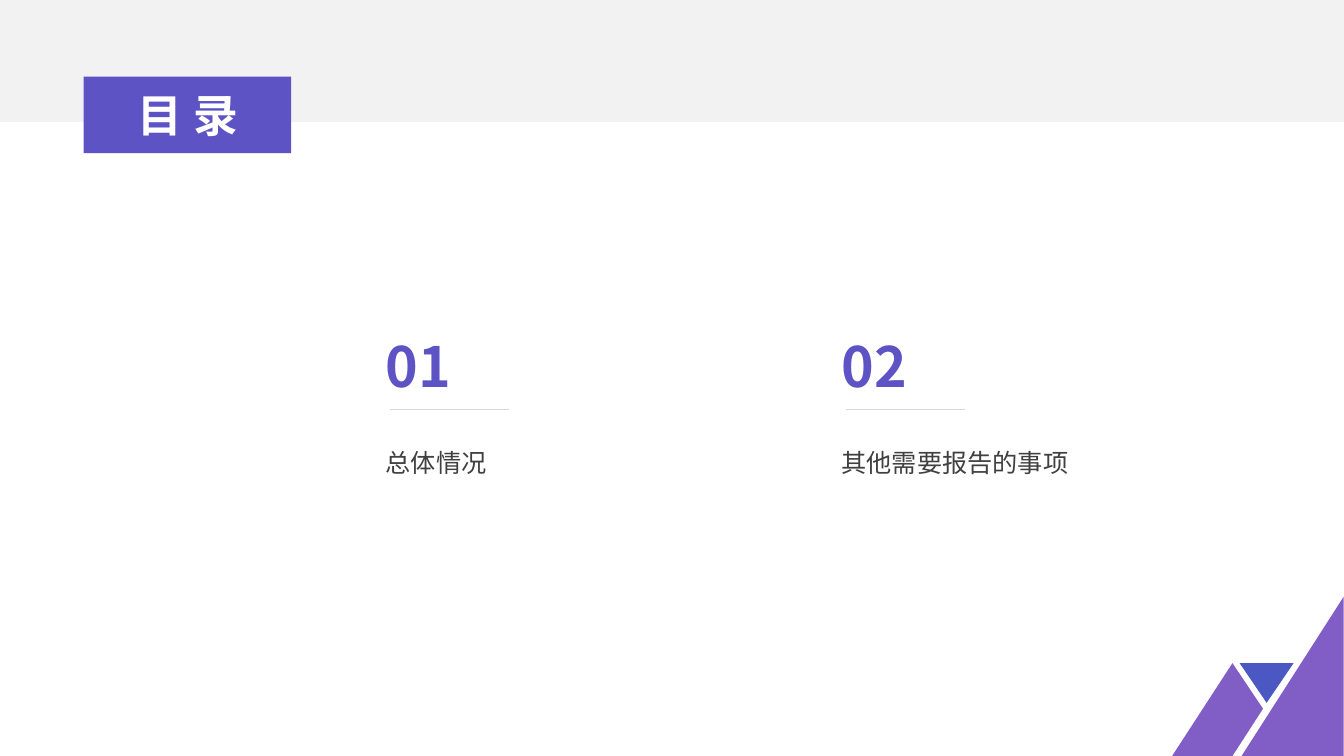
import dataclasses

import lxml.etree
import pptx
import pptx.dml.color
import pptx.enum.shapes
import pptx.enum.text
import pptx.oxml.ns
import pptx.util

Cm = pptx.util.Cm
Pt = pptx.util.Pt
ALIGN = pptx.enum.text.PP_ALIGN
SHAPE = pptx.enum.shapes.MSO_SHAPE
qn = pptx.oxml.ns.qn

FONT = "Noto Sans CJK SC"
COLORS = {
    "accent": "5D53C4",
    "mountain": "815EC5",
    "valley": "4B58C3",
    "band": "F2F2F2",
    "rule": "D9D9D9",
    "text": "404040",
    "white": "FFFFFF",
}
WIDTH, HEIGHT = 33.87, 19.05
FIRST_LEFT, PITCH = 9.47, 11.49


@dataclasses.dataclass
class Block:
    left: float
    top: float
    width: float
    height: float
    color: str
    kind: int = SHAPE.RECTANGLE
    rotation: float = 0
    apex: float | None = None


@dataclasses.dataclass
class Entry:
    number: str
    label: str


BLOCKS = [
    Block(31.29, 15.04, 2.57, 4.01, "mountain", SHAPE.ISOSCELES_TRIANGLE, apex=1),
    Block(31.24, 16.71, 1.36, 1, "valley", SHAPE.ISOSCELES_TRIANGLE, rotation=180),
    Block(0, 0, WIDTH, 3.07, "band"),
]
SLOPE = [(31.06, 16.71), (31.83, 17.86), (31.06, HEIGHT), (29.54, HEIGHT)]
ENTRIES = [Entry("01", "总体情况"), Entry("02", "其他需要报告的事项")]


def rgb(name: str) -> pptx.dml.color.RGBColor:
    return pptx.dml.color.RGBColor.from_string(COLORS[name])


def paint(sp, color: str) -> None:
    sp.shadow.inherit = False
    sp.fill.solid()
    sp.fill.fore_color.rgb = rgb(color)
    sp.line.fill.background()


def add_run(p, text: str, size: float, color: str, bold: bool = False):
    """Add a run whose Latin and East Asian fonts match."""
    r = p.add_run()
    r.text = text
    r.font.size = Pt(size)
    r.font.bold = bold
    r.font.color.rgb = rgb(color)
    r.font.name = FONT
    lxml.etree.SubElement(r.font._element, qn("a:ea"), typeface=FONT)
    return r


def add_block(slide, block: Block) -> None:
    sp = slide.shapes.add_shape(
        block.kind, Cm(block.left), Cm(block.top), Cm(block.width), Cm(block.height))
    sp.rotation = block.rotation
    if block.apex is not None:
        sp.adjustments[0] = block.apex
    paint(sp, block.color)


def add_slope(slide) -> None:
    points = [(Cm(x), Cm(y)) for x, y in SLOPE]
    builder = slide.shapes.build_freeform(*points[0])
    builder.add_line_segments(points[1:], close=True)
    paint(builder.convert_to_shape(), "mountain")


def add_textbox(slide, left: float, top: float, width: float, height: float):
    """Add a wrapping text box and return its first paragraph."""
    sp = slide.shapes.add_textbox(Cm(left), Cm(top), Cm(width), Cm(height))
    sp.text_frame.word_wrap = True
    return sp.text_frame.paragraphs[0]


def add_entry(slide, entry: Entry, left: float) -> None:
    p = add_textbox(slide, left, 10.77, 8.99, 2.44)
    p.alignment = ALIGN.JUSTIFY
    p.line_spacing = 1.5
    p.space_after = Pt(20)
    add_run(p, entry.label, 18, "text")

    p = add_textbox(slide, left, 8.24, 2.26, 2.13)
    add_run(p, entry.number, 39.6, "accent", bold=True)

    rule = slide.shapes.add_connector(
        pptx.enum.shapes.MSO_CONNECTOR.STRAIGHT,
        Cm(left + 0.36), Cm(10.31), Cm(left + 3.36), Cm(10.31))
    rule.line.color.rgb = rgb("rule")
    rule.line.width = Pt(0.5)
    lxml.etree.SubElement(rule._element.spPr, qn("a:effectLst"))


def format_title(slide) -> None:
    """Place the title placeholder in front, as a filled label."""
    title = slide.shapes.title
    title.left, title.top, title.width, title.height = Cm(2.11), Cm(1.93), Cm(5.23), Cm(1.93)
    paint(title, "accent")
    tf = title.text_frame
    tf.auto_size = pptx.enum.text.MSO_AUTO_SIZE.NONE
    tf.vertical_anchor = pptx.enum.text.MSO_ANCHOR.MIDDLE
    p = tf.paragraphs[0]
    p.alignment = ALIGN.CENTER
    r = add_run(p, "目录", 32, "white", bold=True)
    r.font._element.set("spc", "800")
    slide.shapes._spTree.append(title._element)


def main() -> None:
    prs = pptx.Presentation()
    prs.slide_width, prs.slide_height = Cm(WIDTH), Cm(HEIGHT)
    slide = prs.slides.add_slide(prs.slide_layouts[5])
    add_slope(slide)
    for block in BLOCKS:
        add_block(slide, block)
    for i, entry in enumerate(ENTRIES):
        add_entry(slide, entry, FIRST_LEFT + i * PITCH)
    format_title(slide)
    prs.save("out.pptx")


if __name__ == "__main__":
    main()
